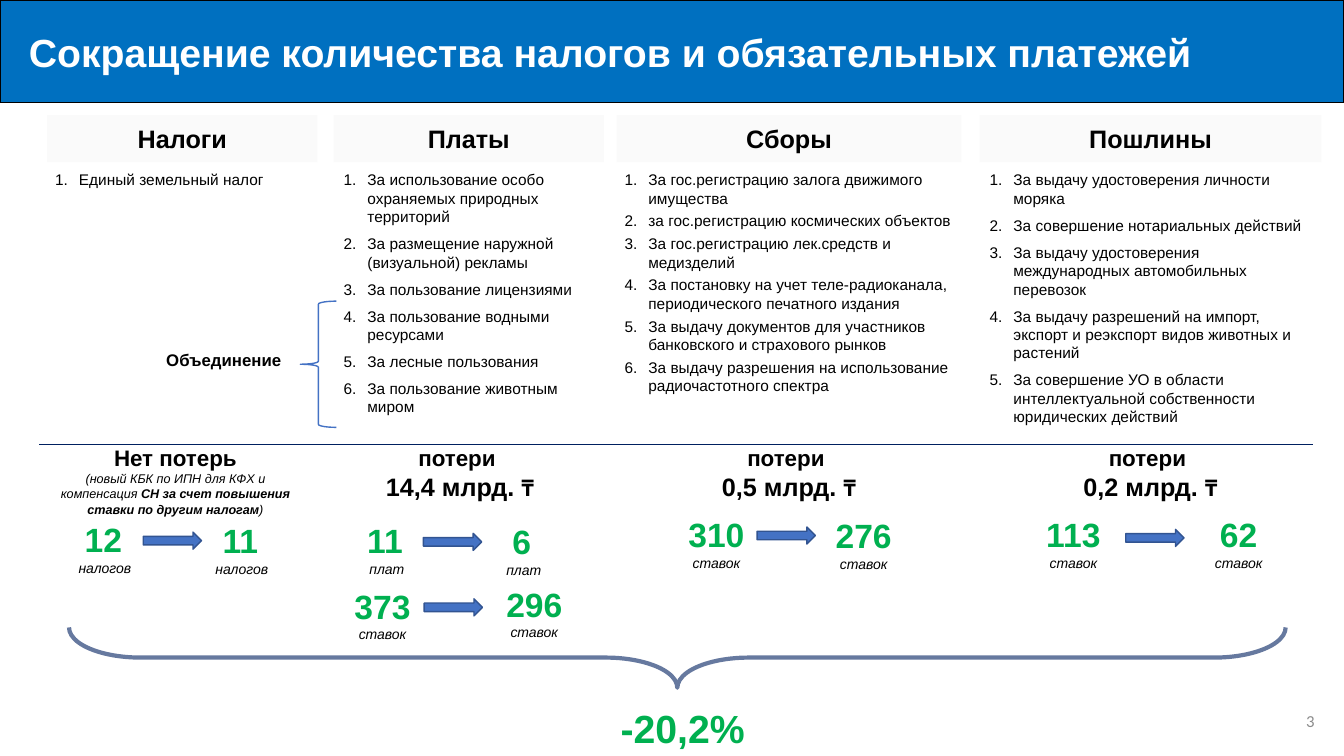
import pptx
import pptx.util
import pptx.dml.color
import pptx.enum.shapes
import pptx.enum.text
import pptx.oxml.ns
import lxml.etree

Cm, Pt = pptx.util.Cm, pptx.util.Pt
SHAPE = pptx.enum.shapes.MSO_SHAPE
ALIGN = pptx.enum.text.PP_ALIGN
ANCHOR = pptx.enum.text.MSO_ANCHOR
GROW = pptx.enum.text.MSO_AUTO_SIZE.SHAPE_TO_FIT_TEXT
qn = pptx.oxml.ns.qn

COLORS = {
    "banner": "0070C0", "panel": "FAFAFA", "white": "FFFFFF", "black": "000000",
    "green": "00B050", "navy": "002060", "arrow": "4472C4", "arrow edge": "325491",
    "grey": "8C8C8C",
}
RGB = {name: pptx.dml.color.RGBColor.from_string(value) for name, value in COLORS.items()}


def write(shape, paragraphs, alignments, color="black", **frame_format):
    """Fill a shape with paragraphs, each a list of (text, font values) runs."""
    frame = shape.text_frame
    for name, value in {"word_wrap": True, **frame_format}.items():
        setattr(frame, name, value)
    for index, (runs, alignment) in enumerate(zip(paragraphs, alignments)):
        paragraph = frame.paragraphs[0] if index == 0 else frame.add_paragraph()
        paragraph.alignment = alignment
        for text, font_format in runs:
            run = paragraph.add_run()
            run.text = text
            values = {"name": "Arial", "color": color, **font_format}
            run.font.color.rgb = RGB[values.pop("color")]
            for name, value in values.items():
                setattr(run.font, name, value)
    return frame


def add_shape(kind, box, fill=None, line=None, line_width=1):
    shape = slide.shapes.add_shape(kind, *map(Cm, box))
    shape.shadow.inherit = False
    if fill:
        shape.fill.solid()
        shape.fill.fore_color.rgb = RGB[fill]
    else:
        shape.fill.background()
    if line:
        shape.line.color.rgb = RGB[line]
        shape.line.width = Pt(line_width)
    else:
        shape.line.fill.background()
    return shape


presentation = pptx.Presentation()
presentation.slide_width, presentation.slide_height = Cm(33.87), Cm(19.05)
slide = presentation.slides.add_slide(presentation.slide_layouts[6])

# Title banner
banner = add_shape(SHAPE.RECTANGLE, (0, 0, 33.87, 2.59), "banner", "black")
title = write(banner,
              [[("Сокращение количества налогов и обязательных платежей",
                 {"size": Pt(28), "bold": True})]],
              [ALIGN.LEFT], "white", vertical_anchor=ANCHOR.MIDDLE)
title.paragraphs[0]._p.get_or_add_pPr().set("marL", str(Cm(0.48)))

# Column headings with numbered lists: heading, (left, width), list (left, width, height), spacing
columns = [
    ("Налоги", (1.19, 6.81), (1.14, 6.83, 0.74), 6, ["Единый земельный налог"]),
    ("Платы", (8.41, 6.81), (8.41, 6.71, 6.5), 6, [
        "За использование особо охраняемых природных территорий",
        "За размещение наружной (визуальной) рекламы",
        "За пользование лицензиями",
        "За пользование водными ресурсами",
        "За лесные пользования",
        "За пользование животным миром"]),
    ("Сборы", (15.54, 8.69), (15.49, 8.92, 5.97), 3, [
        "За гос.регистрацию залога движимого имущества",
        "за гос.регистрацию космических объектов",
        "За гос.регистрацию лек.средств и медизделий",
        "За постановку на учет теле-радиоканала, периодического печатного издания",
        "За выдачу документов для участников банковского и страхового рынков",
        "За выдачу разрешения на использование радиочастотного спектра"]),
    ("Пошлины", (24.69, 8.61), (24.69, 8.74, 6.76), 6, [
        "За выдачу удостоверения личности моряка",
        "За совершение нотариальных действий",
        "За выдачу удостоверения международных автомобильных перевозок",
        "За выдачу разрешений на импорт, экспорт и реэкспорт видов животных и растений",
        "За совершение УО в области интеллектуальной собственности юридических действий"]),
]
for heading, (left, width), (list_left, list_width, list_height), spacing, items in columns:
    panel = add_shape(SHAPE.RECTANGLE, (left, 2.9, width, 1.19), "panel")
    write(panel, [[(heading, {"size": Pt(18), "bold": True})]], [ALIGN.CENTER],
          vertical_anchor=ANCHOR.MIDDLE)
    list_box = slide.shapes.add_textbox(Cm(list_left), Cm(4.17), Cm(list_width), Cm(list_height))
    frame = write(list_box, [[(item, {"size": Pt(11)})] for item in items],
                  [ALIGN.LEFT] * len(items), auto_size=GROW)
    for index, paragraph in enumerate(frame.paragraphs):
        properties = paragraph._p.get_or_add_pPr()
        properties.set("marL", str(Cm(0.6)))
        properties.set("indent", str(-Cm(0.6)))
        lxml.etree.SubElement(properties, qn("a:buFont"), typeface="+mj-lt")
        lxml.etree.SubElement(properties, qn("a:buAutoNum"), type="arabicPeriod")
        if index:
            paragraph.space_before = Pt(spacing)

# Losses under each column
note = {"size": Pt(9), "italic": True}
no_loss = [
    [("Нет потерь", {"size": Pt(16), "bold": True})],
    [("(новый КБК по ИПН для КФХ и компенсация ", note),
     ("СН за счет повышения ставки по другим налогам", {**note, "bold": True}),
     (")", note)],
]
losses = [(0.99, 6.86, 2.08, None), (8.23, 6.73, 1.7, "14,4"),
          (15.62, 8.53, 1.7, "0,5"), (24.69, 8.61, 1.7, "0,2")]
for left, width, height, amount in losses:
    loss_box = slide.shapes.add_textbox(Cm(left), Cm(11.07), Cm(width), Cm(height))
    loss = [
        [("потери ", {"size": Pt(16), "bold": True})],
        [(f"{amount} млрд. ", {"size": Pt(18), "bold": True}),
         ("₸", {"size": Pt(18), "bold": True, "name": "Calibri"})],
    ] if amount else no_loss
    write(loss_box, loss, [ALIGN.CENTER] * 2, auto_size=GROW)

divider = slide.shapes.add_connector(pptx.enum.shapes.MSO_CONNECTOR.STRAIGHT,
                                     Cm(0.99), Cm(11.2), Cm(33.1), Cm(11.2))
divider.line.color.rgb = RGB["navy"]
divider.line.width = Pt(1)
lxml.etree.SubElement(divider._element.spPr, qn("a:effectLst"))

# Merged payments
add_shape(SHAPE.LEFT_BRACE, (7.57, 7.59, 0.91, 3.18), line="arrow")
merge_label = slide.shapes.add_textbox(Cm(0.76), Cm(8.69), Cm(6.58), Cm(0.76))
write(merge_label, [[("Объединение", {"size": Pt(12), "bold": True})]], [ALIGN.RIGHT],
      auto_size=GROW)

# Changes: unit, alignment of the unit, arrow (left, top), two counts (text, left, top, width)
changes = [
    ("налогов", ALIGN.LEFT, (3.61, 13.41),
     [("12 ", 1.73, 12.95, 1.85), ("11 ", 5.18, 12.98, 1.85)]),
    ("плат", ALIGN.CENTER, (10.67, 13.44),
     [("11 ", 8.99, 12.98, 1.52), ("6 ", 12.5, 13, 1.4)]),
    ("ставок", ALIGN.CENTER, (10.69, 15.09),
     [("373", 8.66, 14.63, 1.96), ("296", 12.5, 14.58, 1.93)]),
    ("ставок", ALIGN.CENTER, (19.08, 13.28),
     [("310", 17.09, 12.83, 1.93), ("276", 20.8, 12.85, 1.93)]),
    ("ставок", ALIGN.CENTER, (28.37, 13.34),
     [("113", 26.11, 12.83, 1.88), ("62", 30.35, 12.83, 1.73)]),
]
unit_format = {"size": Pt(10), "italic": True}
for unit, unit_alignment, arrow_place, counts in changes:
    add_shape(SHAPE.RIGHT_ARROW, (*arrow_place, 1.47, 0.43), "arrow", "arrow edge")
    for count, left, top, width in counts:
        count_box = slide.shapes.add_textbox(Cm(left), Cm(top), Cm(width), Cm(1.7))
        count_runs = [(count.strip(), {"size": Pt(24), "bold": True, "color": "green"})]
        if count.endswith(" "):
            count_runs.append((" ", unit_format))
        write(count_box, [count_runs, [(unit, unit_format)]],
              [ALIGN.CENTER, unit_alignment], word_wrap=False, auto_size=GROW)

# Overall result
total_brace = add_shape(SHAPE.LEFT_BRACE, (16.31, 1.24, 1.52, 30.66), line="navy", line_width=3)
total_brace.rotation = 270
total_brace.adjustments[0] = 1.185
line_color = total_brace.line._ln.find(".//" + qn("a:srgbClr"))
lxml.etree.SubElement(line_color, qn("a:alpha"), val="60000")

total_box = slide.shapes.add_textbox(Cm(15.39), Cm(17.63), Cm(3.89), Cm(1.45))
write(total_box, [[("-20,2%", {"size": Pt(28), "bold": True})]], [ALIGN.LEFT], "green",
      auto_size=GROW)

number_box = slide.shapes.add_textbox(Cm(25.76), Cm(17.65), Cm(7.62), Cm(1.02))
write(number_box, [[("3", {"size": Pt(12), "name": "Calibri"})]], [ALIGN.RIGHT], "grey",
      vertical_anchor=ANCHOR.MIDDLE)

presentation.save("out.pptx")
